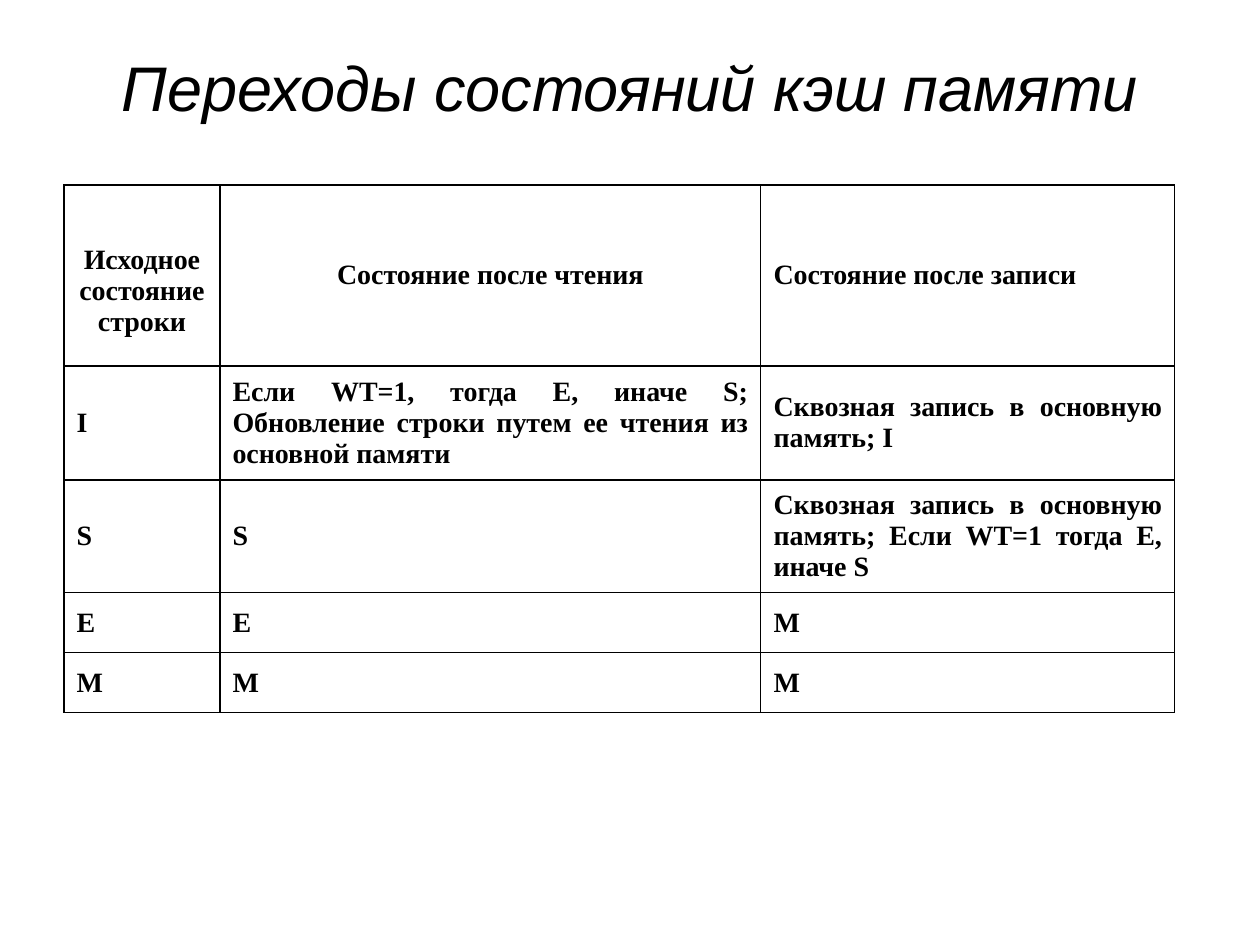
import pptx
import pptx.util
import pptx.dml.color
import pptx.enum.text
import pptx.oxml
import pptx.oxml.ns

ALIGN = pptx.enum.text.PP_ALIGN
MIDDLE = pptx.enum.text.MSO_ANCHOR.MIDDLE
PX_PER_INCH = 126
BLACK = "000000"
LINE_HEIGHT = 31
HEADER = ["Исходное состояние строки", "Состояние после чтения", "Состояние после записи"]
TRANSITIONS = [
    ["I", "Если WT=1, тогда Е, иначе S; Обновление строки путем ее чтения из основной памяти",
     "Сквозная запись в основную память; I"],
    ["S", "S", "Сквозная запись в основную память; Если WT=1 тогда Е, иначе S"],
    ["Е", "Е", "М"],
    ["М", "М", "М"],
]
COLUMN_WIDTHS = [156, 541, 414]
ROW_HEIGHTS = [181, 114, 113, 60, 60]


def px(length):
    return pptx.util.Emu(round(length * 914400 / PX_PER_INCH))


def color(value):
    return pptx.dml.color.RGBColor.from_string(value)


def write(frame, text, *, size, font, align, bold=False, italic=False):
    paragraph = frame.paragraphs[0]
    paragraph.alignment = align
    run = paragraph.add_run()
    run.text = text
    run.font.size = pptx.util.Pt(size)
    run.font.name = font
    run.font.bold = bold
    run.font.italic = italic
    run.font.color.rgb = color(BLACK)


def border_cell(cell, width=0.75):
    properties = cell._tc.get_or_add_tcPr()
    # Borders come before the fill in the cell properties
    for position, side in enumerate(("lnL", "lnR", "lnT", "lnB")):
        properties.insert(position, pptx.oxml.parse_xml(
            f'<a:{side} {pptx.oxml.ns.nsdecls("a")} w="{pptx.util.Pt(width)}">'
            f'<a:solidFill><a:srgbClr val="{BLACK}"/></a:solidFill></a:{side}>'))


def place_title(slide, left, top, width, height):
    title = slide.shapes.title
    title.left, title.top, title.width, title.height = map(px, (left, top, width, height))
    title.text_frame.vertical_anchor = MIDDLE
    write(title.text_frame, "Переходы состояний кэш памяти",
          size=36, font="Arial", align=ALIGN.CENTER, italic=True)


def place_transitions(slide, left, top):
    rows = [HEADER] + TRANSITIONS
    table = slide.shapes.add_table(
        len(rows), len(HEADER), px(left), px(top),
        px(sum(COLUMN_WIDTHS)), px(sum(ROW_HEIGHTS))).table
    table.first_row = table.horz_banding = False
    for column, width in zip(table.columns, COLUMN_WIDTHS):
        column.width = px(width)
    for row, height, texts in zip(table.rows, ROW_HEIGHTS, rows):
        row.height = px(height)
        for cell, text in zip(row.cells, texts):
            centered = text in HEADER[:2]
            cell.fill.background()
            cell.vertical_anchor = MIDDLE
            write(cell.text_frame, text, size=16, font="Times New Roman", bold=True,
                  align=ALIGN.CENTER if centered else ALIGN.JUSTIFY)
            border_cell(cell)
    # The first heading sits half a line below the middle
    first_heading = table.cell(0, 0)
    first_heading.margin_top = first_heading.margin_bottom + px(LINE_HEIGHT)


def main():
    presentation = pptx.Presentation()
    presentation.slide_width, presentation.slide_height = px(1260), px(945)
    slide = presentation.slides.add_slide(presentation.slide_layouts[5])
    slide.background.fill.solid()
    slide.background.fill.fore_color.rgb = color("FFFFFF")
    place_title(slide, 63, 38, 1134, 97)
    place_transitions(slide, 64, 185)
    presentation.save("out.pptx")


if __name__ == "__main__":
    main()
